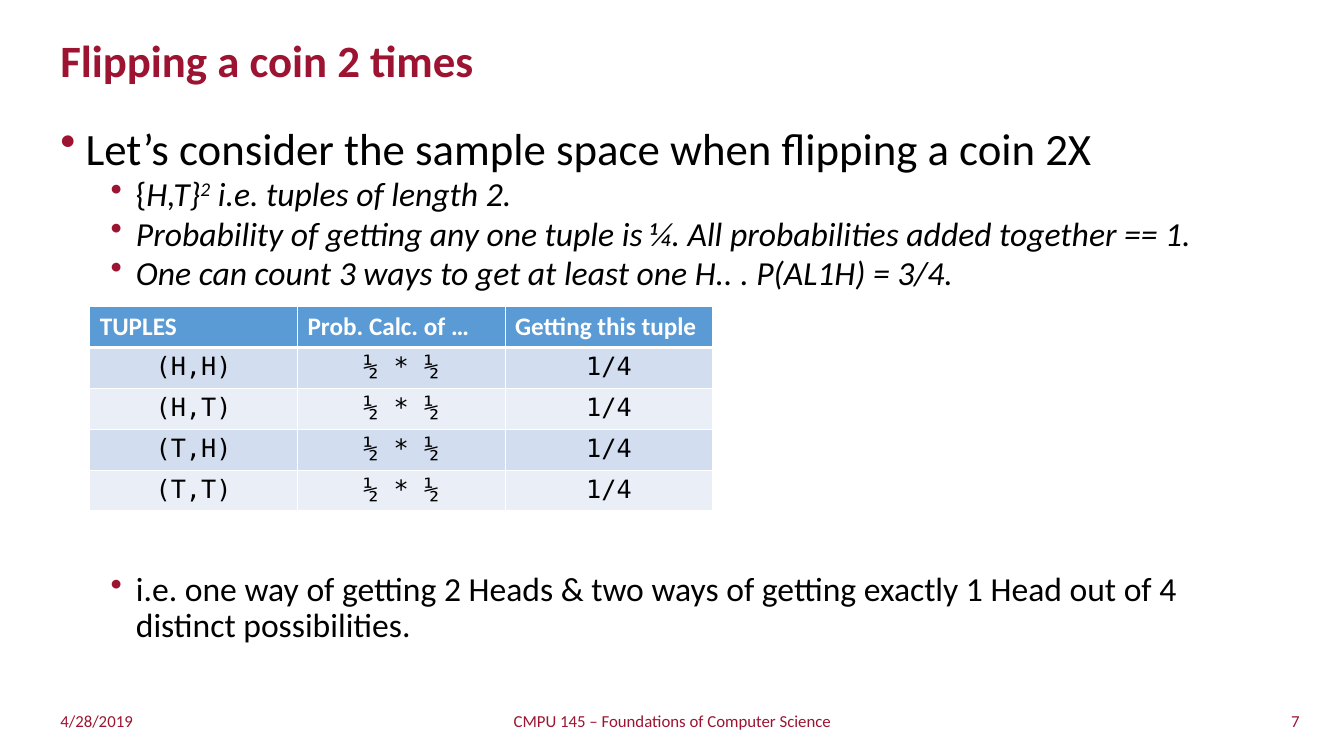
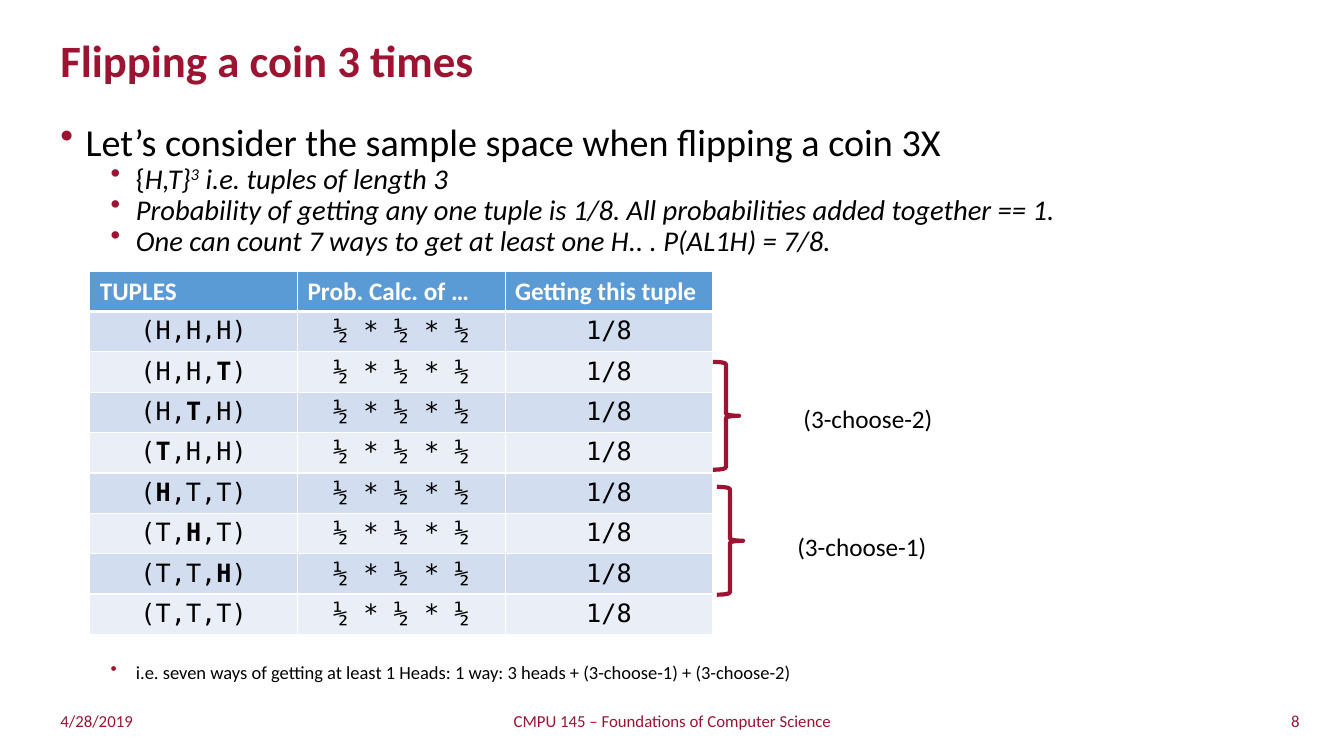
from dataclasses import dataclass
from typing import NamedTuple

from lxml import etree
from pptx import Presentation
from pptx import util as u
from pptx.dml.color import RGBColor
from pptx.enum import shapes, text
from pptx.oxml import ns

PX = 9144  # EMU per px, 100 px to the inch
WIDE, HIGH = 1333, 750

RED = RGBColor(0x9C, 0x14, 0x31)
BLACK = RGBColor(0x00, 0x00, 0x00)
WHITE = RGBColor(0xFF, 0xFF, 0xFF)
BLUE = RGBColor(0x5B, 0x9B, 0xD5)
BANDS = (RGBColor(0xD2, 0xDE, 0xEF), RGBColor(0xEA, 0xEF, 0xF7))

SANS, MONO = "Calibri", "DejaVu Sans Mono"
LEFT, MID, RIGHT = text.PP_ALIGN.LEFT, text.PP_ALIGN.CENTER, text.PP_ALIGN.RIGHT
TOP, CENTER = text.MSO_ANCHOR.TOP, text.MSO_ANCHOR.MIDDLE
HEADS = ("TUPLES", "Prob. Calc. of …", "Getting this tuple")


class Box(NamedTuple):
    x: int
    y: int
    w: int
    h: int

    def emu(self) -> list[int]:
        return [n * PX for n in self]


class Run(NamedTuple):
    words: str
    bold: bool = False
    italic: bool = False
    raised: bool = False


class Foot(NamedTuple):
    box: Box
    align: text.PP_ALIGN
    words: str


class Brace(NamedTuple):
    box: Box
    label: Box
    words: str


@dataclass
class Lesson:
    page: int
    flips: int
    chance: str
    stop: str
    facts: tuple[str, ...]
    body: Box
    sizes: tuple[float, float]
    lead: float
    table: Box
    tuples: tuple[str, ...]
    note: str
    place: Box
    small: float
    tight: float
    braces: tuple[Brace, ...] = ()


LESSONS = (
    Lesson(
        page=7, flips=2, chance="1/4", stop=".",
        facts=(
            "Probability of getting any one tuple is ¼. All probabilities added together == 1.",
            "One can count 3 ways to get at least one H.. . P(AL1H) = 3/4.",
        ),
        body=Box(50, 125, 1233, 179), sizes=(32, 24), lead=0.8,
        table=Box(89, 304, 618, 203),
        tuples=("(H,H)", "(H,T)", "(T,H)", "(T,T)"),
        note="i.e. one way of getting 2 Heads & two ways of getting exactly 1 Head "
             "out of 4 distinct possibilities.",
        place=Box(50, 563, 1233, 123), small=24, tight=0.9,
    ),
    Lesson(
        page=8, flips=3, chance="1/8", stop="",
        facts=(
            "Probability of getting any one tuple is 1/8. All probabilities added together == 1.",
            "One can count 7 ways to get at least one H.. . P(AL1H) = 7/8.",
        ),
        body=Box(50, 125, 1233, 137), sizes=(27.2, 20.4), lead=0.7,
        table=Box(89, 269, 618, 324),
        tuples=("(H,H,H)", "(H,H,|T|)", "(H,|T|,H)", "(|T|,H,H)",
                "(|H|,T,T)", "(T,|H|,T)", "(T,T,|H|)", "(T,T,T)"),
        note="i.e. seven ways of getting at least 1 Heads: 1 way: 3 heads "
             "+ (3-choose-1) + (3-choose-2)",
        place=Box(50, 657, 1233, 29), small=13.2, tight=0.7,
        braces=(
            Brace(Box(707, 359, 26, 107), Box(787, 395, 156, 40), "(3-choose-2)"),
            Brace(Box(711, 483, 26, 107), Box(781, 522, 156, 40), "(3-choose-1)"),
        ),
    ),
)


def apply(item, **form) -> None:
    """Set each named format value on the item."""
    for name, value in form.items():
        setattr(item, name, value)


def write(para, runs: list[Run], size: float, color: RGBColor, face: str = SANS) -> None:
    for part in runs:
        run = para.add_run()
        run.text = part.words
        apply(run.font, name=face, size=u.Pt(size), bold=part.bold, italic=part.italic)
        run.font.color.rgb = color
        if part.raised:
            run.font._element.set("baseline", "30000")


def frame(slide, box: Box, anchor=TOP):
    area = slide.shapes.add_textbox(*box.emu()).text_frame
    apply(area, word_wrap=True, vertical_anchor=anchor)
    return area


def line(slide, box: Box, run: Run, size: float, color: RGBColor,
         align=LEFT, anchor=CENTER, lead: float = 1.0) -> None:
    """Add a text box holding one paragraph."""
    para = frame(slide, box, anchor).paragraphs[0]
    apply(para, alignment=align, line_spacing=lead)
    write(para, [run], size, color)


def bullet(para, level: int, lead: float, before: float) -> None:
    props = para._p.get_or_add_pPr()
    props.set("marL", str((25, 75)[level] * PX))
    props.set("indent", str(-25 * PX))
    tint = etree.SubElement(props, ns.qn("a:buClr"))
    etree.SubElement(tint, ns.qn("a:srgbClr"), val=str(RED))
    etree.SubElement(props, ns.qn("a:buChar"), char="•")
    apply(para, level=level, line_spacing=lead, space_before=u.Pt(before))


def body(slide, les: Lesson) -> None:
    rows = [
        [Run(f"Let’s consider the sample space when flipping a coin {les.flips}X")],
        [Run("{"), Run("H,T}", italic=True), Run(str(les.flips), italic=True, raised=True),
         Run(f" i.e. tuples of length {les.flips}{les.stop}", italic=True)],
        *([Run(fact, italic=True)] for fact in les.facts),
    ]
    area = frame(slide, les.body)
    for i, runs in enumerate(rows):
        para = area.add_paragraph() if i else area.paragraphs[0]
        level = min(i, 1)
        bullet(para, level, les.lead, 5 * level)
        write(para, runs, les.sizes[level], BLACK)


def edge(cell, **widths: float) -> None:
    """Draw white cell borders; widths in points are keyed L, R, T, B."""
    props = cell._tc.get_or_add_tcPr()
    for i, (side, width) in enumerate(widths.items()):
        rule = etree.Element(ns.qn(f"a:ln{side}"), w=str(u.Pt(width)))
        fill = etree.SubElement(rule, ns.qn("a:solidFill"))
        etree.SubElement(fill, ns.qn("a:srgbClr"), val=str(WHITE))
        props.insert(i, rule)


def table(slide, les: Lesson) -> None:
    odds = " * ".join("½" * les.flips)
    rows = [HEADS, *((name, odds, les.chance) for name in les.tuples)]
    grid = slide.shapes.add_table(len(rows), len(HEADS), *les.table.emu()).table
    for r, row in enumerate(rows):
        head = r == 0
        for c, words in enumerate(row):
            cell = grid.cell(r, c)
            cell.fill.solid()
            cell.fill.fore_color.rgb = BLUE if head else BANDS[(r - 1) % 2]
            edge(cell, L=1, R=1, T=3 if r == 1 else 1, B=3 if head else 1)
            para = cell.text_frame.paragraphs[0]
            para.alignment = LEFT if head else MID
            # Text between bars is bold
            runs = [Run(part, bold=head or i % 2 == 1)
                    for i, part in enumerate(words.split("|"))]
            write(para, runs, 18, WHITE if head else BLACK, SANS if head else MONO)


def note(slide, les: Lesson) -> None:
    para = frame(slide, les.place).paragraphs[0]
    bullet(para, 1, les.tight, 0)
    write(para, [Run(les.note)], les.small, BLACK)


def brace(slide, item: Brace) -> None:
    shape = slide.shapes.add_shape(shapes.MSO_SHAPE.RIGHT_BRACE, *item.box.emu())
    shape.shadow.inherit = False
    shape.fill.background()
    shape.line.color.rgb = RED
    shape.line.width = u.Pt(3)
    line(slide, item.label, Run(item.words), 18, BLACK, anchor=TOP)


def common(slide, les: Lesson) -> None:
    """Add the title and the footers."""
    line(slide, Box(50, 25, 1145, 75), Run(f"Flipping a coin {les.flips} times", bold=True),
         32, RED, lead=0.9)
    feet = (
        Foot(Box(50, 695, 376, 40), LEFT, "4/28/2019"),
        Foot(Box(442, 695, 450, 40), MID, "CMPU 145 – Foundations of Computer Science"),
        Foot(Box(923, 695, 376, 40), RIGHT, str(les.page)),
    )
    for foot in feet:
        line(slide, foot.box, Run(foot.words), 12, RED, foot.align)


def main() -> None:
    deck = Presentation()
    apply(deck, slide_width=WIDE * PX, slide_height=HIGH * PX)
    for les in LESSONS:
        slide = deck.slides.add_slide(deck.slide_layouts[6])
        for draw in (common, body, table, note):
            draw(slide, les)
        for item in les.braces:
            brace(slide, item)
    deck.save("out.pptx")


if __name__ == "__main__":
    main()
